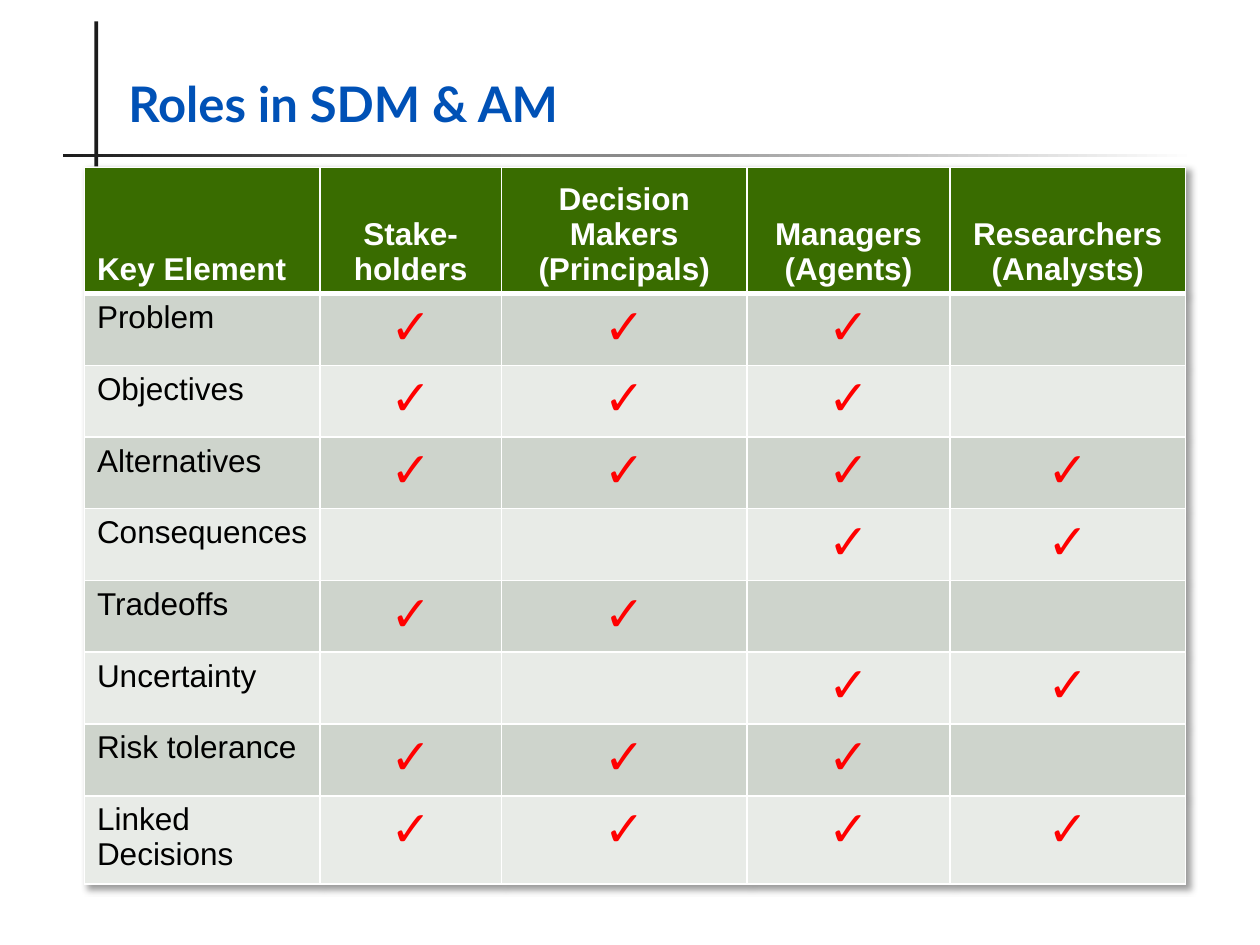
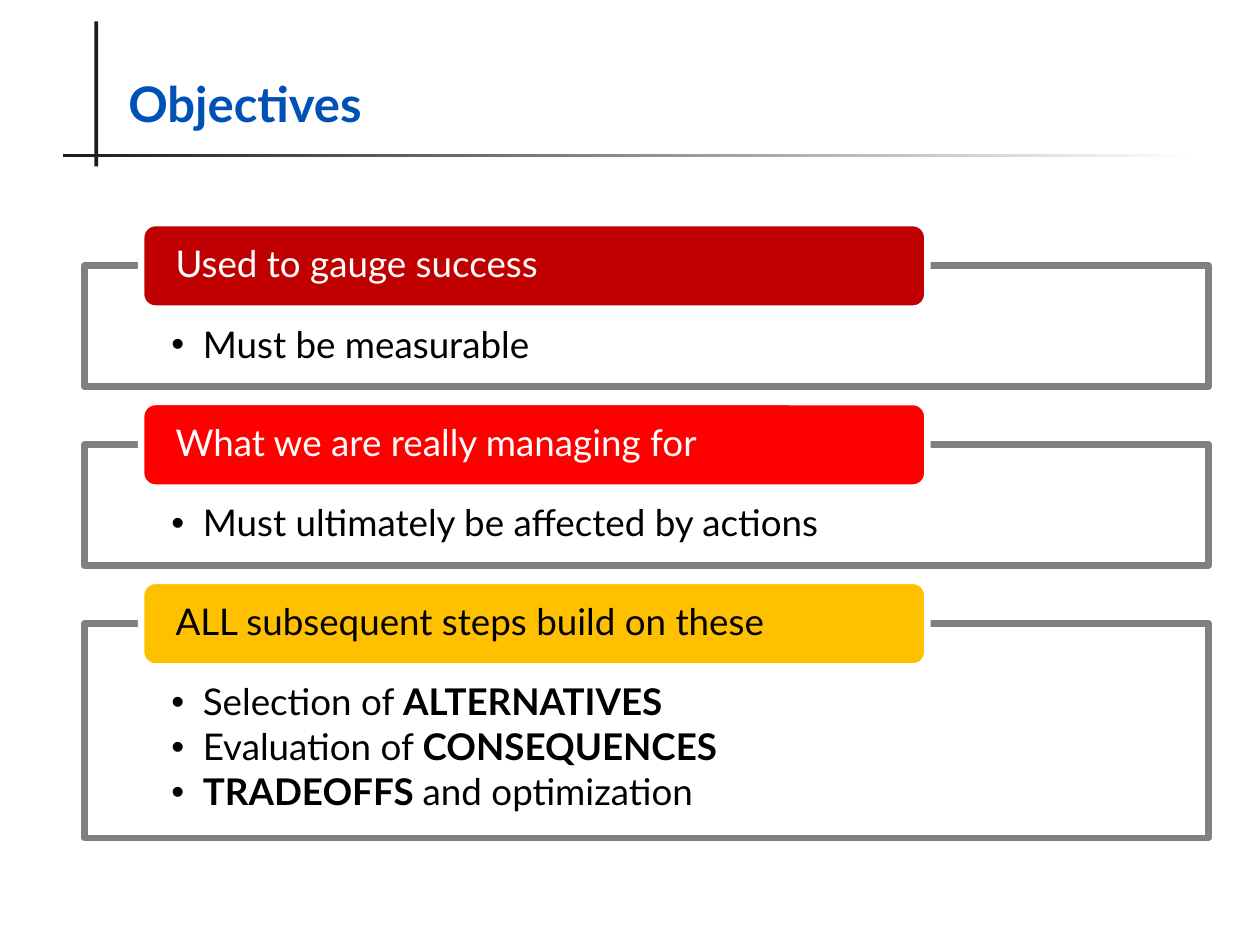
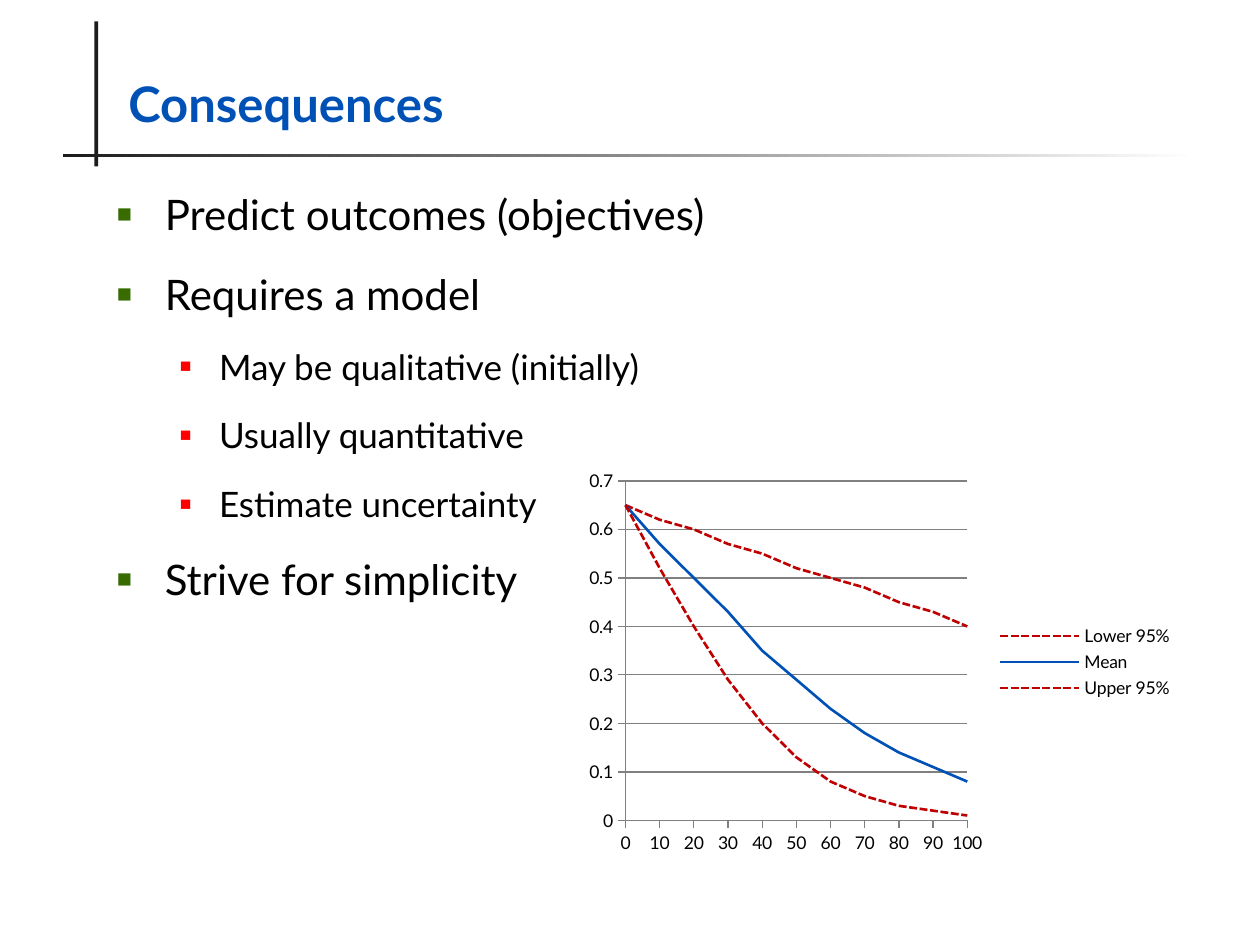
from dataclasses import dataclass
from typing import Any, NamedTuple, Optional

from lxml.etree import SubElement
from pptx import Presentation
from pptx.chart.data import XyChartData
from pptx.dml.color import RGBColor
from pptx.enum.chart import XL_CHART_TYPE, XL_LEGEND_POSITION, XL_TICK_MARK
from pptx.enum.dml import MSO_LINE
from pptx.enum.shapes import MSO_SHAPE
from pptx.enum.text import MSO_ANCHOR, PP_ALIGN
from pptx.oxml import parse_xml
from pptx.oxml.ns import nsdecls, qn
from pptx.util import Pt

# Scale, fonts and colours
EMU_PER_PX = 9144  # 100 px to the inch
LATO = "Lato"
ARIAL = "Arial"
BLACK = RGBColor(0x00, 0x00, 0x00)
WHITE = RGBColor(0xFF, 0xFF, 0xFF)
CHARCOAL = RGBColor(0x1C, 0x1C, 0x1C)
GRAY = RGBColor(0x80, 0x80, 0x80)
BLUE = RGBColor(0x00, 0x51, 0xB6)
GREEN = RGBColor(0x39, 0x6C, 0x00)
DARK_RED = RGBColor(0xC0, 0x00, 0x00)
RED = RGBColor(0xFF, 0x00, 0x00)
AMBER = RGBColor(0xFF, 0xC0, 0x00)
ROW_BANDS = (RGBColor(0xCE, 0xD4, 0xCC), RGBColor(0xE8, 0xEB, 0xE7))


class Box(NamedTuple):
    left: int
    top: int
    width: int
    height: int


class Run(NamedTuple):
    text: str
    bold: bool = False


class Bullet(NamedTuple):
    character: str
    margin: int
    hanging: int
    color: RGBColor = BLACK
    percent: int = 100


@dataclass(frozen=True)
class TextStyle:
    font: dict[str, Any]
    color: RGBColor
    paragraph: dict[str, Any]
    bullet: Optional[Bullet] = None


@dataclass(frozen=True)
class Line:
    runs: tuple[Run, ...]
    style: TextStyle


@dataclass(frozen=True)
class Objective:
    heading: str
    fill: RGBColor
    text_color: RGBColor
    panel_height: int
    points: tuple[tuple[Run, ...], ...]


class Curve(NamedTuple):
    name: str
    color: RGBColor
    dashed: bool
    values: tuple[float, ...]


# Text styles
TITLE = TextStyle({"name": LATO, "size": Pt(28), "bold": True}, BLUE, {})
HEADER_CELL = TextStyle({"name": ARIAL, "size": Pt(18), "bold": True}, WHITE, {})
LABEL_CELL = TextStyle({"name": ARIAL, "size": Pt(18), "bold": False}, BLACK, {})
CHECK_CELL = TextStyle({"name": ARIAL, "size": Pt(28), "bold": True}, RED, {})
POINT = TextStyle({"name": LATO, "size": Pt(21)}, BLACK,
                  {"level": 1, "line_spacing": 0.9, "space_after": Pt(3)},
                  Bullet("•", 25, 25))
BODY_SPACING = {"line_spacing": 1.3, "space_before": Pt(8)}
BODY = TextStyle({"name": LATO, "size": Pt(24)}, BLACK, BODY_SPACING,
                 Bullet("■", 38, 38, GREEN, 60))
SUB_BODY = TextStyle({"name": LATO, "size": Pt(20)}, BLACK, {"level": 1, **BODY_SPACING},
                     Bullet("■", 81, 31, RED, 55))

# Slide 1 content
COLUMN_WIDTHS = (187, 144, 195, 161, 187)
ROW_HEIGHTS = (94, 57, 57, 53, 57, 57, 57, 57, 66)
ROLES = ("Key Element", "Stake-holders", "Decision Makers\v(Principals)",
         "Managers\v(Agents)", "Researchers\v(Analysts)")
CHECK = "✓"
ELEMENTS = (
    ("Problem", (1, 1, 1, 0)),
    ("Objectives", (1, 1, 1, 0)),
    ("Alternatives", (1, 1, 1, 1)),
    ("Consequences", (0, 0, 1, 1)),
    ("Tradeoffs", (1, 1, 0, 0)),
    ("Uncertainty", (0, 0, 1, 1)),
    ("Risk tolerance", (1, 1, 1, 0)),
    ("Linked Decisions", (1, 1, 1, 1)),
)

# Slide 2 content
OBJECTIVE_TOP = 177
OBJECTIVE_PITCH = 142
HEADING_OVERLAP = 34
OBJECTIVES = (
    Objective("Used to gauge success", DARK_RED, WHITE, 96,
              ((Run("Must be measurable"),),)),
    Objective("What we are really managing for", RED, WHITE, 96,
              ((Run("Must ultimately be affected by actions"),),)),
    Objective("ALL subsequent steps build on these", AMBER, BLACK, 170,
              ((Run("Selection of "), Run("ALTERNATIVES", True)),
               (Run("Evaluation of "), Run("CONSEQUENCES", True)),
               (Run("TRADEOFFS ", True), Run("and optimization")))),
)

# Slide 3 content
CONSEQUENCES = (
    ("Predict outcomes (objectives)", BODY),
    ("Requires a model", BODY),
    ("May be qualitative (initially)", SUB_BODY),
    ("Usually quantitative", SUB_BODY),
    ("Estimate uncertainty", SUB_BODY),
    ("Strive for simplicity", BODY),
)
CURVES = (
    Curve("Lower 95%", DARK_RED, True,
          (0.65, 0.52, 0.4, 0.29, 0.2, 0.13, 0.08, 0.05, 0.03, 0.02, 0.01)),
    Curve("Mean", BLUE, False,
          (0.65, 0.57, 0.5, 0.43, 0.35, 0.29, 0.23, 0.18, 0.14, 0.11, 0.08)),
    Curve("Upper 95%", DARK_RED, True,
          (0.65, 0.62, 0.6, 0.57, 0.55, 0.52, 0.5, 0.48, 0.45, 0.43, 0.4)),
)


# Shared helpers
def px(length: int) -> int:
    return length * EMU_PER_PX


def emu(box: Box) -> tuple[int, ...]:
    return tuple(px(length) for length in box)


def apply_format(target: Any, values: dict[str, Any]) -> None:
    for name, value in values.items():
        setattr(target, name, value)


def add_bullet(paragraph: Any, bullet: Bullet) -> None:
    properties = paragraph._p.get_or_add_pPr()
    properties.set("marL", str(px(bullet.margin)))
    properties.set("indent", str(-px(bullet.hanging)))
    color = SubElement(properties, qn("a:buClr"))
    SubElement(color, qn("a:srgbClr"), val=str(bullet.color))
    SubElement(properties, qn("a:buSzPct"), val=str(bullet.percent * 1000))
    SubElement(properties, qn("a:buFont"), typeface=ARIAL)
    SubElement(properties, qn("a:buChar"), char=bullet.character)


def write_lines(text_frame: Any, lines: list[Line]) -> None:
    for index, line in enumerate(lines):
        paragraph = text_frame.paragraphs[0] if index == 0 else text_frame.add_paragraph()
        if line.style.bullet:
            add_bullet(paragraph, line.style.bullet)
        apply_format(paragraph, line.style.paragraph)
        if index == 0:
            paragraph.space_before = Pt(0)
        for text, bold in line.runs:
            run = paragraph.add_run()
            run.text = text
            apply_format(run.font, line.style.font)
            run.font.color.rgb = line.style.color
            if bold:
                run.font.bold = True


def add_text(slide: Any, box: Box, lines: list[Line], anchor: MSO_ANCHOR) -> None:
    text_frame = slide.shapes.add_textbox(*emu(box)).text_frame
    apply_format(text_frame, {"word_wrap": True, "vertical_anchor": anchor})
    write_lines(text_frame, lines)


def add_block(slide: Any, kind: MSO_SHAPE, box: Box, fill: RGBColor,
              outline: Optional[RGBColor] = None) -> Any:
    shape = slide.shapes.add_shape(kind, *emu(box))
    shape.shadow.inherit = False
    shape.fill.solid()
    shape.fill.fore_color.rgb = fill
    if outline is None:
        shape.line.fill.background()
    else:
        shape.line.color.rgb = outline
        shape.line.width = Pt(3.78)
    return shape


def add_titled_slide(presentation: Any, title: str) -> Any:
    slide = presentation.slides.add_slide(presentation.slide_layouts[6])
    add_block(slide, MSO_SHAPE.RECTANGLE, Box(75, 17, 3, 115), CHARCOAL)
    rule = add_block(slide, MSO_SHAPE.RECTANGLE, Box(50, 122, 900, 3), CHARCOAL)
    rule.fill.gradient()
    rule.fill.gradient_angle = 0
    for stop, position, color in zip(rule.fill.gradient_stops, (0, 1), (CHARCOAL, WHITE)):
        stop.position = position
        stop.color.rgb = color
    add_text(slide, Box(92, 25, 858, 85), [Line((Run(title),), TITLE)], MSO_ANCHOR.BOTTOM)
    return slide


# Slide 1: table of roles
def style_cell(cell: Any, fill: RGBColor, bottom_width: int) -> None:
    properties = cell._tc.get_or_add_tcPr()
    for side, width in (("L", 1), ("R", 1), ("T", 1), ("B", bottom_width)):
        border = SubElement(properties, qn(f"a:ln{side}"), w=str(Pt(width)))
        border_fill = SubElement(border, qn("a:solidFill"))
        SubElement(border_fill, qn("a:srgbClr"), val=str(WHITE))
    cell.fill.solid()
    cell.fill.fore_color.rgb = fill


def fill_cell(cell: Any, text: str, style: TextStyle, centred: bool) -> None:
    paragraph = cell.text_frame.paragraphs[0]
    paragraph.text = text
    if centred:
        paragraph.alignment = PP_ALIGN.CENTER
    for run in paragraph.runs:
        apply_format(run.font, style.font)
        run.font.color.rgb = style.color


def add_roles_table(slide: Any) -> None:
    box = Box(67, 133, sum(COLUMN_WIDTHS), sum(ROW_HEIGHTS))
    table = slide.shapes.add_table(len(ROW_HEIGHTS), len(COLUMN_WIDTHS), *emu(box)).table
    table._tbl.tblPr.insert(0, parse_xml(
        f'<a:effectLst {nsdecls("a")}><a:outerShdw blurRad="50800" dist="38100" '
        'dir="2700000" algn="tl" rotWithShape="0"><a:prstClr val="black">'
        '<a:alpha val="40000"/></a:prstClr></a:outerShdw></a:effectLst>'))
    for column, width in zip(table.columns, COLUMN_WIDTHS):
        column.width = px(width)
    for row, height in zip(table.rows, ROW_HEIGHTS):
        row.height = px(height)

    for index, role in enumerate(ROLES):
        cell = table.cell(0, index)
        style_cell(cell, GREEN, 3)
        cell.vertical_anchor = MSO_ANCHOR.BOTTOM
        fill_cell(cell, role, HEADER_CELL, index > 0)
    for row_index, (element, checks) in enumerate(ELEMENTS, start=1):
        for index in range(len(ROLES)):
            cell = table.cell(row_index, index)
            style_cell(cell, ROW_BANDS[(row_index - 1) % 2], 1)
            if index == 0:
                cell.margin_right = px(5)
                fill_cell(cell, element, LABEL_CELL, False)
            elif checks[index - 1]:
                fill_cell(cell, CHECK, CHECK_CELL, True)


# Slide 2: panels with headings
def add_objective(slide: Any, objective: Objective, top: int) -> None:
    panel = add_block(slide, MSO_SHAPE.RECTANGLE,
                      Box(67, top + HEADING_OVERLAP, 892, objective.panel_height), WHITE, GRAY)
    apply_format(panel.text_frame, {
        "word_wrap": True, "vertical_anchor": MSO_ANCHOR.TOP, "margin_left": px(69),
        "margin_right": px(69), "margin_top": px(48), "margin_bottom": px(16)})
    write_lines(panel.text_frame, [Line(runs, POINT) for runs in objective.points])

    heading = add_block(slide, MSO_SHAPE.ROUNDED_RECTANGLE, Box(112, top, 624, 68),
                        objective.fill, WHITE)
    apply_format(heading.text_frame, {
        "word_wrap": True, "vertical_anchor": MSO_ANCHOR.MIDDLE, "margin_left": px(24),
        "margin_right": px(24), "margin_top": 0, "margin_bottom": 0})
    style = TextStyle(POINT.font, objective.text_color, {"line_spacing": 0.9})
    write_lines(heading.text_frame, [Line((Run(objective.heading),), style)])
    for shape in (panel, heading):
        for paragraph in shape.text_frame.paragraphs:
            paragraph.alignment = PP_ALIGN.LEFT


# Slide 3: chart of predictions
def add_prediction_chart(slide: Any) -> None:
    data = XyChartData()
    for curve in CURVES:
        series = data.add_series(curve.name)
        for step, value in enumerate(curve.values):
            series.add_data_point(step * 10, value)
    chart = slide.shapes.add_chart(XL_CHART_TYPE.XY_SCATTER_SMOOTH_NO_MARKERS,
                                   *emu(Box(458, 367, 483, 317)), data).chart
    apply_format(chart, {"has_title": False, "has_legend": True})
    apply_format(chart.font, {"name": LATO, "size": Pt(10)})
    chart.font.color.rgb = BLACK
    apply_format(chart.legend, {"position": XL_LEGEND_POSITION.RIGHT,
                                "include_in_layout": False})
    chart.plots[0].vary_by_categories = False

    across, upward = chart.category_axis, chart.value_axis
    apply_format(across, {"minimum_scale": 0, "maximum_scale": 100, "major_unit": 10})
    apply_format(upward, {"minimum_scale": 0, "maximum_scale": 0.7, "major_unit": 0.1})
    for axis in (across, upward):
        apply_format(axis, {"major_tick_mark": XL_TICK_MARK.OUTSIDE,
                            "minor_tick_mark": XL_TICK_MARK.NONE,
                            "has_major_gridlines": axis is upward})
        apply_format(axis.tick_labels, {"number_format": "General",
                                        "number_format_is_linked": False})
        axis.format.line.color.rgb = GRAY
        axis.format.line.width = Pt(0.75)
    upward.major_gridlines.format.line.color.rgb = GRAY
    upward.major_gridlines.format.line.width = Pt(0.75)

    for series, curve in zip(chart.plots[0].series, CURVES):
        series.smooth = True
        series.format.line.color.rgb = curve.color
        series.format.line.width = Pt(1.5)
        if curve.dashed:
            series.format.line.dash_style = MSO_LINE.SQUARE_DOT


def main() -> None:
    presentation = Presentation()
    apply_format(presentation, {"slide_width": px(1000), "slide_height": px(750)})

    add_roles_table(add_titled_slide(presentation, "Roles in SDM & AM"))

    objectives_slide = add_titled_slide(presentation, "Objectives")
    for index, objective in enumerate(OBJECTIVES):
        add_objective(objectives_slide, objective, OBJECTIVE_TOP + index * OBJECTIVE_PITCH)

    consequences_slide = add_titled_slide(presentation, "Consequences")
    add_text(consequences_slide, Box(83, 133, 858, 537),
             [Line((Run(text),), style) for text, style in CONSEQUENCES], MSO_ANCHOR.TOP)
    add_prediction_chart(consequences_slide)

    presentation.save("out.pptx")


if __name__ == "__main__":
    main()
